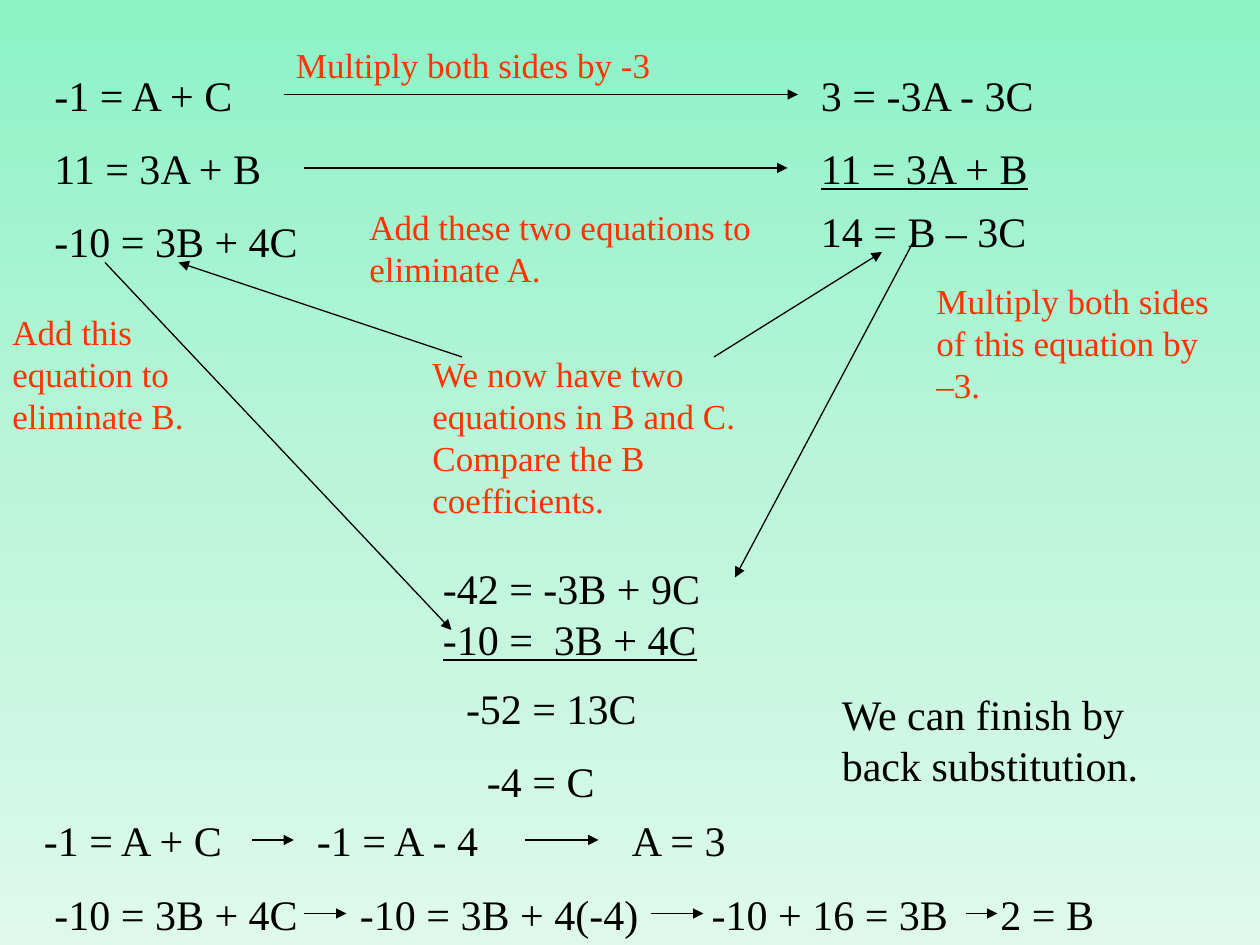
from dataclasses import dataclass

from copy import deepcopy
from lxml import etree
from pptx import Presentation, util as u
from pptx.dml.color import RGBColor
from pptx.enum import shapes, text
from pptx.oxml.ns import qn

PX = 7620
INK, NOTE = "000000", "FF3300"
SIZE = {INK: 24, NOTE: 20}
GAP = 13


@dataclass
class Line:
    words: str
    under: bool = False
    indent: int = 0


@dataclass
class Box:
    x: int
    y: int
    w: int
    h: int
    lines: list
    color: str = INK
    gap: int = GAP
    wrap: bool = True
    tabs: tuple = ()


@dataclass
class Arrow:
    x1: int
    y1: int
    x2: int
    y2: int


def px(n: int) -> u.Emu:
    return u.Emu(n * PX)


def rgb(code: str) -> RGBColor:
    return RGBColor.from_string(code)


def put(item, vals: dict) -> None:
    for key, val in vals.items():
        setattr(item, key, val)


def draw_box(tree, box: Box) -> None:
    shape = tree.add_textbox(*map(px, (box.x, box.y, box.w, box.h)))
    frame = shape.text_frame
    put(frame, {"word_wrap": box.wrap,
                "auto_size": text.MSO_AUTO_SIZE.SHAPE_TO_FIT_TEXT})
    for i, line in enumerate(box.lines):
        para = frame.add_paragraph() if i else frame.paragraphs[0]
        if i:
            para.space_before = u.Pt(box.gap)
        props = para._p.get_or_add_pPr()
        if line.indent:
            props.set("marL", str(px(line.indent)))
        if box.tabs:
            stops = etree.SubElement(props, qn("a:tabLst"))
            for pos in box.tabs:
                etree.SubElement(stops, qn("a:tab"), pos=str(px(pos)), algn="l")
        run = para.add_run()
        run.text = line.words
        put(run.font, {"name": "Times New Roman", "size": u.Pt(SIZE[box.color]),
                       "underline": line.under or None})
        run.font.color.rgb = rgb(box.color)


def draw_arrow(tree, arrow: Arrow) -> None:
    ends = map(px, (arrow.x1, arrow.y1, arrow.x2, arrow.y2))
    link = tree.add_connector(shapes.MSO_CONNECTOR.STRAIGHT, *ends)
    link.line.width = u.Pt(0.75)
    link.line.color.rgb = rgb(INK)
    etree.SubElement(link.line._get_or_add_ln(), qn("a:tailEnd"), type="triangle")
    etree.SubElement(link._element.spPr, qn("a:effectLst"))


def draw(tree, items: list) -> None:
    for item in items:
        if isinstance(item, list):
            draw(tree.add_group_shape().shapes, item)
        elif isinstance(item, Box):
            draw_box(tree, item)
        else:
            draw_arrow(tree, item)


def paint(slide, codes: list) -> None:
    fill = slide.background.fill
    fill.gradient()
    fill.gradient_angle = 270
    stops = next(slide.element.iter(qn("a:gsLst")))
    stops.append(deepcopy(stops[0]))
    for i, (stop, code) in enumerate(zip(fill.gradient_stops, codes)):
        stop.position = i / (len(codes) - 1)
        stop.color.rgb = rgb(code)


ITEMS = [
    Box(40, 60, 320, 206, [Line("-1 = A + C"), Line("11 = 3A + B"),
                           Line("-10 = 3B + 4C")]),
    Box(770, 60, 320, 133, [Line("3 = -3A - 3C"), Line("11 = 3A + B", True)]),
    Arrow(270, 90, 760, 90),
    Box(270, 36, 364, 53, [Line("Multiply both sides by -3")], NOTE, wrap=False),
    Arrow(290, 160, 750, 160),
    Box(340, 190, 420, 92, [Line("Add these two equations to eliminate A.")], NOTE),
    Box(770, 190, 226, 60, [Line("14 = B – 3C")], wrap=False),
    Box(880, 260, 290, 132, [Line("Multiply both sides of this equation by –3.")], NOTE),
    Box(0, 290, 210, 132, [Line("Add this equation to eliminate B.")], NOTE),
    [
        Box(410, 530, 271, 109, [Line("-42 = -3B + 9C"), Line("-10 =  3B + 4C", True)],
            gap=0, wrap=False),
        Box(432, 644, 270, 133, [Line("-52 = 13C"), Line("-4 = C", indent=20)]),
    ],
    Box(400, 330, 380, 172, [Line("We now have two equations in B and C. "
                                  "Compare the B coefficients.")], NOTE),
    Arrow(440, 340, 170, 250),
    Arrow(680, 340, 840, 240),
    Arrow(870, 230, 700, 550),
    Arrow(100, 250, 430, 600),
    Box(790, 650, 370, 109, [Line("We can finish by back substitution.")]),
    [
        Box(30, 770, 660, 60, [Line("-1 = A + C")]),
        Arrow(240, 800, 280, 800),
        Box(290, 770, 420, 60, [Line("-1 = A - 4")]),
        Arrow(500, 800, 570, 800),
        Box(590, 770, 150, 60, [Line("A = 3")]),
    ],
    [
        Box(40, 840, 1120, 60,
            [Line("-10 = 3B + 4C\t-10 = 3B + 4(-4)\t-10 + 16 = 3B\t2 = B")],
            tabs=(291, 626, 901)),
        Arrow(290, 870, 330, 870),
        Arrow(920, 870, 950, 870),
        Arrow(620, 870, 670, 870),
    ],
]


def main() -> None:
    deck = Presentation()
    put(deck, {"slide_width": px(1200), "slide_height": px(900)})
    slide = deck.slides.add_slide(deck.slide_layouts[6])
    paint(slide, ["8CF2C6", "BAF5DA", "DEF9EC"])
    draw(slide.shapes, ITEMS)
    deck.save("out.pptx")


if __name__ == "__main__":
    main()
